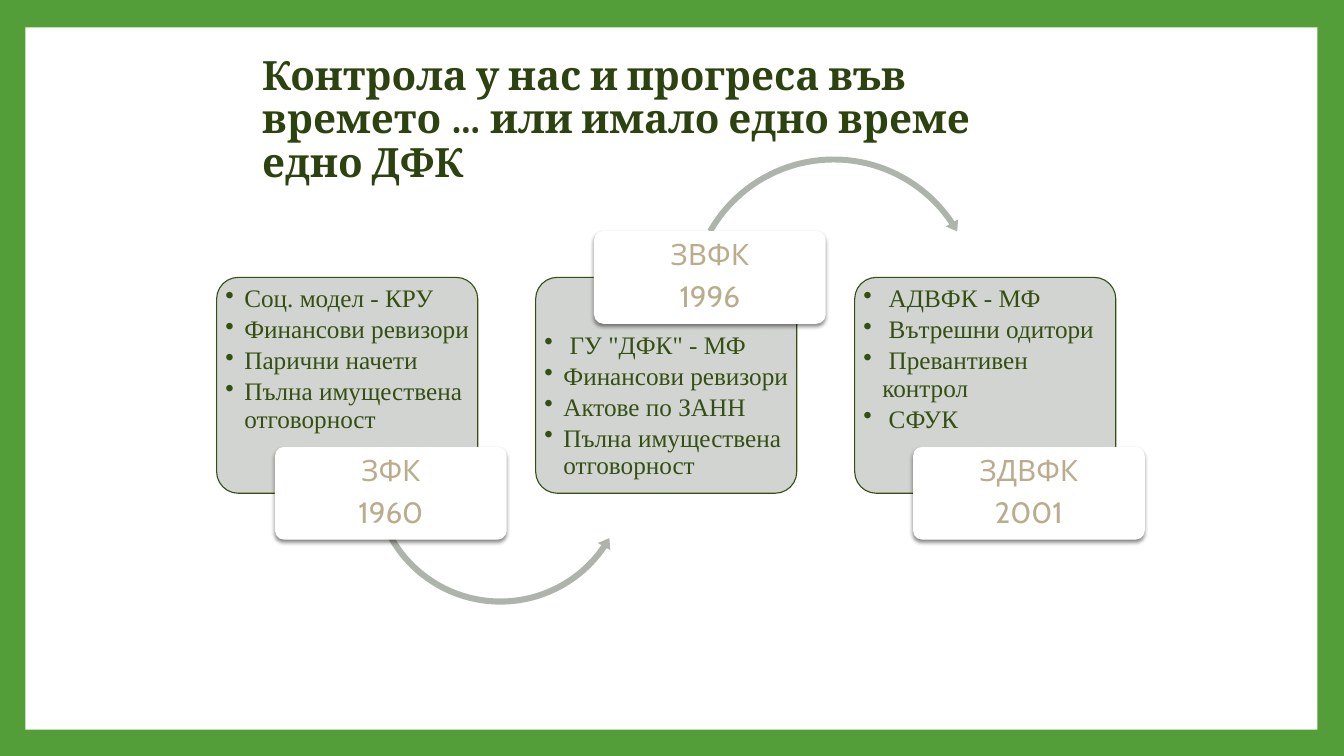
from dataclasses import dataclass
from typing import Optional

from lxml.etree import SubElement
from pptx import Presentation
from pptx.dml.color import RGBColor
from pptx.enum.shapes import MSO_SHAPE as Preset
from pptx.enum.text import MSO_ANCHOR as Anchor, MSO_AUTO_SIZE as AutoSize, PP_ALIGN as Align
from pptx.oxml.ns import qn
from pptx.util import Cm, Pt

COLORS = {
    "border": "549E39",
    "panel": "FFFFFF",
    "title": "2D430F",
    "card": "CED0CC",
    "card_text": "354F12",
    "arrow": "AEB3AB",
    "label": "FFFFFF",
    "label_text": "BAAD8D",
    "shadow": "000000",
}
CARD_LEFT, CARD_TOP, CARD_PITCH = 5.46, 6.99, 8.04
CARD_WIDTH, CARD_HEIGHT = 6.58, 5.44
LABEL_WIDTH, LABEL_HEIGHT, LABEL_SHIFT = 5.84, 2.34, 1.47
CARD_MARGIN, BULLET_INDENT = 0.06, 0.48


@dataclass(frozen=True)
class Arrow:
    preset: Preset
    left: float
    top: float
    size: float
    adjustments: tuple[float, ...]


@dataclass(frozen=True)
class Stage:
    law: str
    year: str
    points: tuple[str, ...]
    label_on_top: bool = False
    arrow: Optional[Arrow] = None


STAGES = (
    Stage(
        "ЗФК", "1960",
        ("Соц. модел - КРУ", "Финансови ревизори", "Парични начети",
         "Пълна имуществена отговорност"),
        arrow=Arrow(Preset.LEFT_CIRCULAR_ARROW, 9.27, 8.66, 6.68,
                    (0.023, 2.745, 20.5, 90.245, 0.027)),
    ),
    Stage(
        "ЗВФК", "1996",
        (' ГУ "ДФК" - МФ', "Финансови ревизори", "Актове по ЗАНН",
         "Пълна имуществена отговорност"),
        label_on_top=True,
        arrow=Arrow(Preset.CIRCULAR_ARROW, 17.25, 3.84, 7.52,
                    (0.02, 2.424, 195.821, 125.755, 0.024)),
    ),
    Stage(
        "ЗДВФК", "2001",
        (" АДВФК - МФ", " Вътрешни одитори", " Превантивен контрол", " СФУК"),
    ),
)


def rgb(name: str) -> RGBColor:
    return RGBColor.from_string(COLORS[name])


def add_box(page, preset: Preset, left: float, top: float, width: float, height: float,
            color: str, adjustments: tuple[float, ...] = ()):
    """Add a flat filled shape without outline; lengths in centimetres."""
    box = page.shapes.add_shape(preset, Cm(left), Cm(top), Cm(width), Cm(height))
    box.shadow.inherit = False
    box.fill.solid()
    box.fill.fore_color.rgb = rgb(color)
    box.line.fill.background()
    for index, value in enumerate(adjustments):
        box.adjustments[index] = value
    return box


def set_margins(frame, left: float, top: float, right: float, bottom: float) -> None:
    frame.margin_left, frame.margin_top = Cm(left), Cm(top)
    frame.margin_right, frame.margin_bottom = Cm(right), Cm(bottom)


def add_span(para, text: str, font: str, size: float, color: str, bold: bool = False) -> None:
    span = para.add_run()
    span.text = text
    span.font.name, span.font.size, span.font.bold = font, Pt(size), bold
    span.font.color.rgb = rgb(color)


def write_paragraphs(frame, lines: tuple[str, ...], align: Align, font: str, size: float,
                     color: str, space_share: float) -> None:
    """Write one paragraph per line; space_share is the gap after it, relative to the size."""
    frame.word_wrap = True
    for index, line in enumerate(lines):
        para = frame.add_paragraph() if index else frame.paragraphs[0]
        para.alignment = align
        para.line_spacing = 0.9
        para.space_after = Pt(size * space_share)
        add_span(para, line, font, size, color)


def add_bullet(para) -> None:
    para.level = 1
    properties = para._p.get_or_add_pPr()
    properties.set("marL", str(Cm(BULLET_INDENT)))
    properties.set("indent", str(-Cm(BULLET_INDENT)))
    SubElement(properties, qn("a:buChar"), char="•")


def make_translucent(box, percent: int) -> None:
    color = box.element.spPr.find(qn("a:solidFill")).find(qn("a:srgbClr"))
    SubElement(color, qn("a:alpha"), val=str(percent * 1000))


def add_drop_shadow(box) -> None:
    effects = box.element.spPr.find(qn("a:effectLst"))
    shadow = SubElement(effects, qn("a:outerShdw"), blurRad=str(Pt(3)), dist=str(Pt(2)),
                        dir=str(90 * 60000), algn="ctr", rotWithShape="0")
    color = SubElement(shadow, qn("a:srgbClr"), val=COLORS["shadow"])
    SubElement(color, qn("a:alpha"), val="45000")


def add_card(page, stage: Stage, left: float) -> None:
    card = add_box(page, Preset.ROUNDED_RECTANGLE, left, CARD_TOP, CARD_WIDTH, CARD_HEIGHT,
                   "card", (0.1,))
    make_translucent(card, 90)
    card.line.color.rgb = rgb("card_text")
    card.line.width = Pt(0.79)
    frame = card.text_frame
    frame.vertical_anchor = Anchor.TOP
    top_margin = CARD_MARGIN + (LABEL_HEIGHT / 2 if stage.label_on_top else 0)
    set_margins(frame, CARD_MARGIN, top_margin, CARD_MARGIN, CARD_MARGIN)
    write_paragraphs(frame, stage.points, Align.LEFT, "Times New Roman", 18, "card_text", 0.15)
    for para in frame.paragraphs:
        add_bullet(para)


def add_label(page, stage: Stage, card_left: float) -> None:
    """Add the law and year, centred on the top or bottom edge of the card."""
    edge = CARD_TOP if stage.label_on_top else CARD_TOP + CARD_HEIGHT
    label = add_box(page, Preset.ROUNDED_RECTANGLE, card_left + LABEL_SHIFT,
                    edge - LABEL_HEIGHT / 2, LABEL_WIDTH, LABEL_HEIGHT, "label", (0.1,))
    add_drop_shadow(label)
    label.text_frame.vertical_anchor = Anchor.MIDDLE
    set_margins(label.text_frame, 0.1, 0.08, 0.1, 0.08)
    write_paragraphs(label.text_frame, (stage.law, stage.year), Align.CENTER, "Cabin", 21,
                     "label_text", 0.35)


def add_stage(page, stage: Stage, left: float) -> None:
    add_card(page, stage, left)
    arrow = stage.arrow
    if arrow:
        add_box(page, arrow.preset, arrow.left, arrow.top, arrow.size, arrow.size,
                "arrow", arrow.adjustments)
    add_label(page, stage, left)


def format_title(title) -> None:
    title.left, title.top, title.width, title.height = Cm(6.35), Cm(1.45), Cm(20.52), Cm(3.18)
    frame = title.text_frame
    frame.word_wrap = True
    frame.auto_size = AutoSize.NONE
    frame.vertical_anchor = Anchor.MIDDLE
    para = frame.paragraphs[0]
    para.alignment = Align.LEFT
    para.line_spacing = 0.9
    para.space_before = Pt(0)
    add_span(para, "Контрола у нас и прогреса във времето … или имало едно време едно ДФК",
             "Cambria", 28.8, "title", bold=True)


def main() -> None:
    deck = Presentation()
    deck.slide_width, deck.slide_height = Cm(33.87), Cm(19.05)
    page = deck.slides.add_slide(deck.slide_layouts[5])
    page.background.fill.solid()
    page.background.fill.fore_color.rgb = rgb("border")
    title = page.shapes.title
    panel = add_box(page, Preset.RECTANGLE, 0.64, 0.69, 32.56, 17.7, "panel")
    title.element.addprevious(panel.element)
    format_title(title)
    for index, stage in enumerate(STAGES):
        add_stage(page, stage, CARD_LEFT + index * CARD_PITCH)
    deck.save("out.pptx")


if __name__ == "__main__":
    main()
